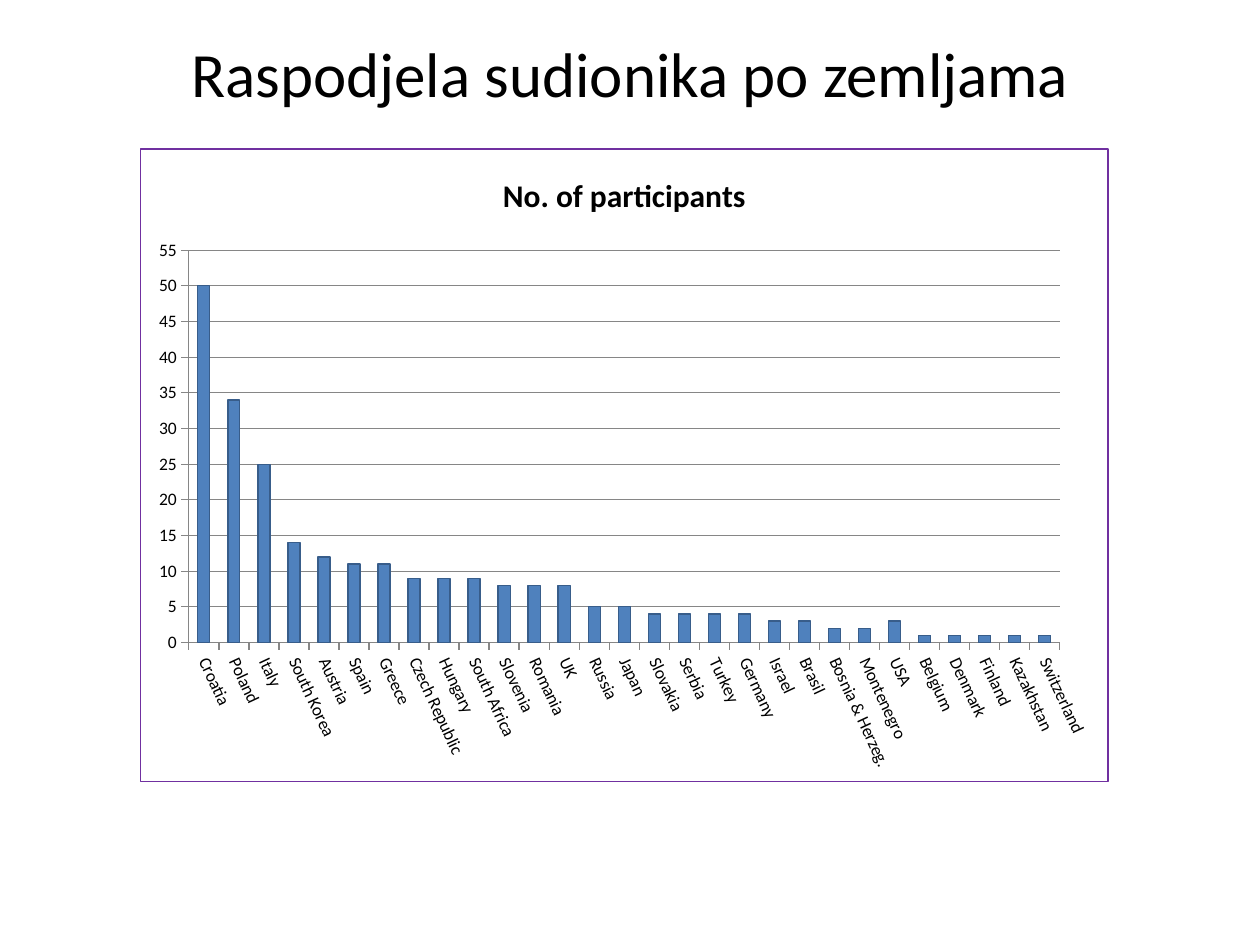
from lxml.etree import fromstring
from pptx import Presentation
from pptx.chart.data import CategoryChartData as Data
from pptx.dml.color import RGBColor as Rgb
from pptx.enum.chart import XL_CHART_TYPE as Kind, XL_TICK_MARK as Tick
from pptx.enum.text import MSO_ANCHOR as Anchor, PP_ALIGN as Align
from pptx.oxml.ns import nsdecls, qn
from pptx.util import Inches, Pt

HUES = {"text": "000000", "bar": "4F81BD", "edge": "385D8A",
        "grid": "868686", "frame": "7030A0", "back": "FFFFFF"}
FACE = "Calibri"
WIDE, HIGH = Inches(10), Inches(7.5)
ROWS = [
    ("Croatia", 50), ("Poland", 34), ("Italy", 25), ("South Korea", 14),
    ("Austria", 12), ("Spain", 11), ("Greece", 11), ("Czech Republic", 9),
    ("Hungary", 9), ("South Africa", 9), ("Slovenia", 8), ("Romania", 8),
    ("UK", 8), ("Russia", 5), ("Japan", 5), ("Slovakia", 4), ("Serbia", 4),
    ("Turkey", 4), ("Germany", 4), ("Israel", 3), ("Brasil", 3),
    ("Bosnia & Herzeg.", 2), ("Montenegro", 2), ("USA", 3), ("Belgium", 1),
    ("Denmark", 1), ("Finland", 1), ("Kazakhstan", 1), ("Switzerland", 1),
]


def hue(name):
    return Rgb.from_string(HUES[name])


def area(left, top, width, height):
    return [int(share * side) for share, side in
            zip((left, top, width, height), (WIDE, HIGH, WIDE, HIGH))]


def style(font, size, bold=False):
    font.name, font.size, font.bold = FACE, Pt(size), bold
    font.color.rgb = hue("text")


def write(frame, text, size=18, bold=False, align=Align.CENTER):
    para = frame.paragraphs[0]
    para.alignment = align
    run = para.add_run()
    run.text = text
    style(run.font, size, bold)


def stroke(line, name, width=0.75):
    line.color.rgb = hue(name)
    line.width = Pt(width)


def head(slide, text):
    frame = slide.shapes.add_textbox(*area(0.05, 0.024, 0.9, 0.105)).text_frame
    frame.word_wrap = True
    frame.vertical_anchor = Anchor.MIDDLE
    write(frame, text, size=36)


def border(chart):
    chart._chartSpace.find(qn("c:chart")).addnext(fromstring(
        f'<c:spPr {nsdecls("c", "a")}>'
        f'<a:solidFill><a:srgbClr val="{HUES["back"]}"/></a:solidFill>'
        f'<a:ln w="{Pt(0.75)}"><a:solidFill><a:srgbClr val="{HUES["frame"]}"/>'
        '</a:solidFill></a:ln></c:spPr>'))


def place(chart, **shares):
    plot = chart._chartSpace.find(".//" + qn("c:plotArea"))
    for old in plot.findall(qn("c:layout")):
        plot.remove(old)
    parts = "".join(f'<c:{key} val="{val}"/>' for key, val in shares.items())
    plot.insert(0, fromstring(
        f'<c:layout {nsdecls("c")}><c:manualLayout>'
        '<c:layoutTarget val="inner"/><c:xMode val="edge"/>'
        f'<c:yMode val="edge"/>{parts}</c:manualLayout></c:layout>'))


def axes(chart):
    count, land = chart.value_axis, chart.category_axis
    count.minimum_scale, count.maximum_scale, count.major_unit = 0, 55, 5
    count.has_major_gridlines = True
    stroke(count.major_gridlines.format.line, "grid")
    for axis in (count, land):
        axis.major_tick_mark = Tick.OUTSIDE
        axis.minor_tick_mark = Tick.NONE
        stroke(axis.format.line, "grid")
        style(axis.tick_labels.font, 10)
    body = land._element.find(qn("c:txPr")).find(qn("a:bodyPr"))
    body.set("rot", str(65 * 60000))
    body.set("vert", "horz")


def graph(slide, name):
    data = Data()
    data.categories = [land for land, _ in ROWS]
    data.add_series(name, [count for _, count in ROWS])
    chart = slide.shapes.add_chart(
        Kind.COLUMN_CLUSTERED, *area(0.111, 0.157, 0.769, 0.671), data).chart
    style(chart.font, 10)
    chart.has_legend = False
    chart.has_title = True
    write(chart.chart_title.text_frame, name, bold=True)
    plot = chart.plots[0]
    plot.gap_width = 150
    plot.vary_by_categories = False
    look = plot.series[0].format
    look.fill.solid()
    look.fill.fore_color.rgb = hue("bar")
    stroke(look.line, "edge")
    axes(chart)
    border(chart)
    place(chart, x=0.05, y=0.16, w=0.9, h=0.62)


def main():
    deck = Presentation()
    deck.slide_width, deck.slide_height = WIDE, HIGH
    slide = deck.slides.add_slide(deck.slide_layouts[6])
    head(slide, "Raspodjela sudionika po zemljama")
    graph(slide, "No. of participants")
    deck.save("out.pptx")


if __name__ == "__main__":
    main()
